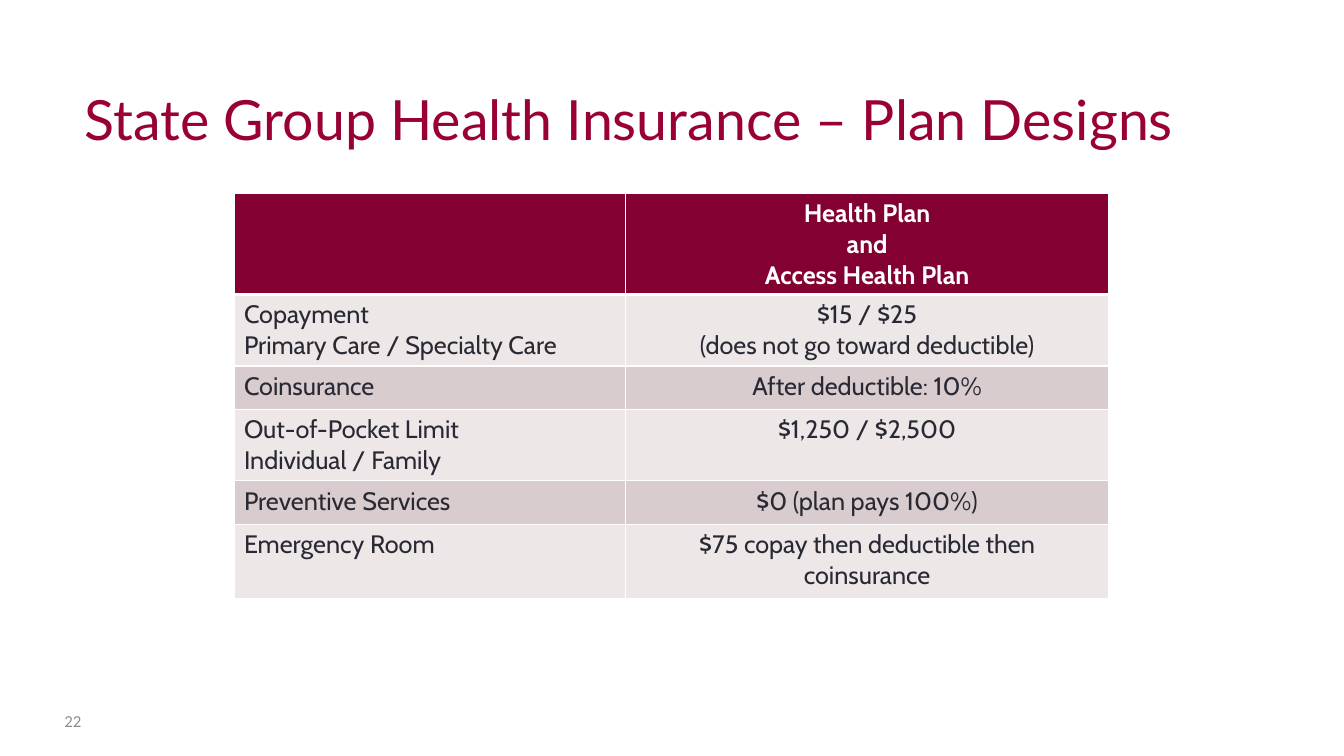
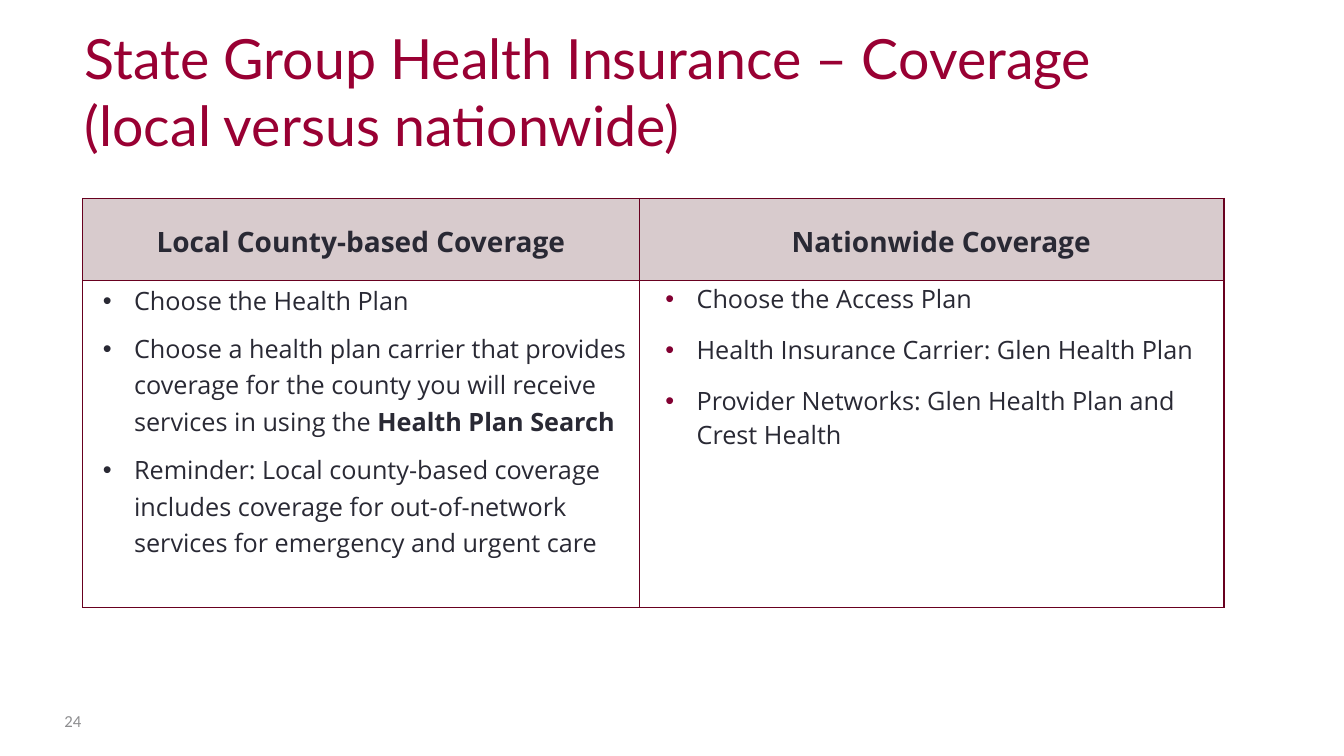
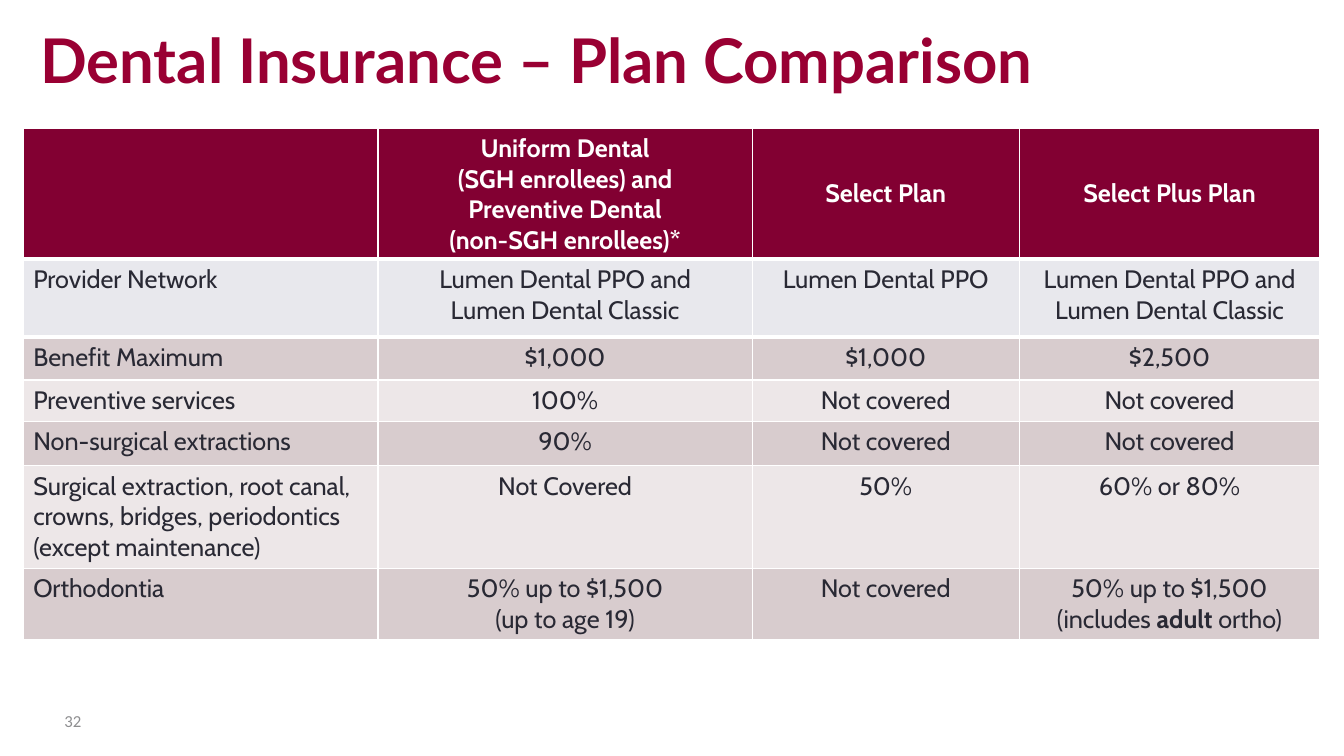
from lxml import etree
from pptx import Presentation
from pptx.dml.color import RGBColor
from pptx.enum.text import MSO_ANCHOR as Anchor, MSO_AUTO_SIZE as AutoSize, PP_ALIGN as Align
from pptx.oxml.ns import qn
from pptx.util import Inches, Pt

WHITE = RGBColor(0xFF, 0xFF, 0xFF)
TITLE_RED = RGBColor(0x99, 0x00, 0x33)
MAROON = RGBColor(0x82, 0x00, 0x32)
DARK_MAROON = RGBColor(0x68, 0x00, 0x1F)
INK = RGBColor(0x29, 0x29, 0x34)
NUMBER_GREY = RGBColor(0x8E, 0x8E, 0x90)
LIGHT_BAND = RGBColor(0xED, 0xE7, 0xE8)
DARK_BAND = RGBColor(0xD8, 0xCC, 0xCE)
COOL_BAND = RGBColor(0xE8, 0xE8, 0xED)
HEADING_FILL = RGBColor(0xD8, 0xCB, 0xCD)

# In table text a new line starts a paragraph and ** switches bold on or off.
PLAN_DESIGNS = [
    ["", "Health Plan\nand\nAccess Health Plan"],
    ["Copayment\nPrimary Care / Specialty Care", "$15 / $25\n(does not go toward deductible)"],
    ["Coinsurance", "After deductible: 10%"],
    ["Out-of-Pocket Limit\nIndividual / Family", "$1,250 / $2,500"],
    ["Preventive Services", "$0 (plan pays 100%)"],
    ["Emergency Room", "$75 copay then deductible then coinsurance"],
]
DENTAL_PLANS = [
    ["", "Uniform Dental\n(SGH enrollees) and\nPreventive Dental\n(non-SGH enrollees)*",
     "Select Plan", "Select Plus Plan"],
    ["Provider Network", "Lumen Dental PPO and\nLumen Dental Classic", "Lumen Dental PPO",
     "Lumen Dental PPO and\nLumen Dental Classic"],
    ["Benefit Maximum", "$1,000", "$1,000", "$2,500"],
    ["Preventive services", "100%", "Not covered", "Not covered"],
    ["Non-surgical extractions", "90%", "Not covered", "Not covered"],
    ["Surgical extraction, root canal, crowns, bridges, periodontics (except maintenance)",
     "Not Covered", "50%", "60% or 80%"],
    ["Orthodontia", "50% up to $1,500\n(up to age 19)", "Not covered",
     "50% up to $1,500\n(includes **adult** ortho)"],
]
COVERAGE = [
    ["Local County-based Coverage", "Nationwide Coverage"],
    ["Choose the Health Plan\n"
     "Choose a health plan carrier that provides coverage for the county you will receive "
     "services in using the **Health Plan Search**\n"
     "Reminder: Local county-based coverage includes coverage for out-of-network services "
     "for emergency and urgent care",
     "Choose the Access Plan\n"
     "Health Insurance Carrier: Glen Health Plan\n"
     "Provider Networks: Glen Health Plan and Crest Health"],
]
# Per column: heading indent, bullet indent, bullet colour, line spacing, space before and after
COVERAGE_COLUMNS = [
    (0, 0.44, INK, 1.07, 0, 8),
    (0.19, 0.5, MAROON, 1.0, 6, 6),
]


def add_titled_slide(presentation, title, box, number, size=39.6, bold=False):
    slide = presentation.slides.add_slide(presentation.slide_layouts[5])
    shape = slide.shapes.title
    shape.left, shape.top, shape.width, shape.height = map(Inches, box)
    text_frame = shape.text_frame
    text_frame.text = title
    text_frame.word_wrap = True
    text_frame.auto_size = AutoSize.NONE
    text_frame.vertical_anchor = Anchor.BOTTOM
    text_frame.paragraphs[0].alignment = Align.LEFT
    format_runs(text_frame.paragraphs[0], "Lato", size, TITLE_RED, bold)

    number_box = slide.shapes.add_textbox(*map(Inches, (0.54, 6.95, 0.56, 0.4)))
    number_frame = number_box.text_frame
    number_frame.text = str(number)
    number_frame.word_wrap = True
    number_frame.vertical_anchor = Anchor.MIDDLE
    format_runs(number_frame.paragraphs[0], "Calibri", 12, NUMBER_GREY)
    return slide


def format_runs(paragraph, font_name, size, color, bold=False):
    for run in paragraph.runs:
        run.font.name = font_name
        run.font.size = Pt(size)
        run.font.color.rgb = color
        run.font.bold = bold or bool(run.font.bold)


def add_table(slide, left, top, column_widths, row_heights):
    frame = slide.shapes.add_table(
        len(row_heights), len(column_widths), Inches(left), Inches(top),
        Inches(sum(column_widths)), Inches(sum(row_heights)))
    table = frame.table
    table.first_row = table.horz_banding = False
    for column, width in zip(table.columns, column_widths):
        column.width = Inches(width)
    for row, height in zip(table.rows, row_heights):
        row.height = Inches(height)
    return table


def set_borders(cell, color, top=1, bottom=1):
    """Add the four border lines; call before the cell gets its fill."""
    properties = cell._tc.get_or_add_tcPr()
    for side, width in (("L", 1), ("R", 1), ("T", top), ("B", bottom)):
        line = etree.SubElement(properties, qn(f"a:ln{side}"), w=str(Pt(width)))
        fill = etree.SubElement(line, qn("a:solidFill"))
        etree.SubElement(fill, qn("a:srgbClr"), val=str(color))


def fill_cell(cell, color):
    cell.fill.solid()
    cell.fill.fore_color.rgb = color


def write_cell(cell, text):
    """Write the marked-up text and return its paragraphs."""
    text_frame = cell.text_frame
    for index, line in enumerate(text.split("\n")):
        paragraph = text_frame.add_paragraph() if index else text_frame.paragraphs[0]
        for part, piece in enumerate(line.split("**")):
            if piece:
                run = paragraph.add_run()
                run.text = piece
                run.font.bold = part % 2 == 1
    return text_frame.paragraphs


def set_indent(paragraph, margin, first_line=0):
    properties = paragraph._p.get_or_add_pPr()
    properties.set("marL", str(Inches(margin)))
    properties.set("indent", str(Inches(first_line)))


def add_bullet(paragraph, color):
    properties = paragraph._p.get_or_add_pPr()
    bullet_color = etree.SubElement(properties, qn("a:buClr"))
    etree.SubElement(bullet_color, qn("a:srgbClr"), val=str(color))
    etree.SubElement(properties, qn("a:buFont"), typeface="Arial")
    etree.SubElement(properties, qn("a:buChar"), char="•")


def add_plan_table(slide, rows, left, top, column_widths, row_heights, row_fills, thick_lines):
    """Draw a plan table; thick_lines holds the numbers of the rows below a thick rule."""
    table = add_table(slide, left, top, column_widths, row_heights)
    for row_index, (texts, fill) in enumerate(zip(rows, row_fills)):
        is_header = row_index == 0
        for column_index, text in enumerate(texts):
            cell = table.cell(row_index, column_index)
            set_borders(cell, WHITE, top=3 if row_index in thick_lines else 1,
                        bottom=3 if row_index + 1 in thick_lines else 1)
            fill_cell(cell, fill)
            cell.vertical_anchor = Anchor.MIDDLE if is_header else Anchor.TOP
            for paragraph in write_cell(cell, text):
                paragraph.alignment = Align.CENTER if column_index else Align.LEFT
                format_runs(paragraph, "Cabin", 18, WHITE if is_header else INK, is_header)


def add_coverage_table(slide):
    table = add_table(slide, 0.82, 1.97, [5.52, 5.8], [0.81, 3.25])
    for column_index, column in enumerate(COVERAGE_COLUMNS):
        heading_indent, bullet_indent, bullet_color, spacing, before, after = column
        heading, body = (table.cell(row, column_index) for row in range(2))
        for cell in (heading, body):
            set_borders(cell, DARK_MAROON)
            cell.margin_left = cell.margin_right = Inches(0.07)
            cell.margin_top, cell.margin_bottom = Inches(0.01), 0

        fill_cell(heading, HEADING_FILL)
        heading.vertical_anchor = Anchor.MIDDLE
        paragraph = write_cell(heading, COVERAGE[0][column_index])[0]
        paragraph.alignment = Align.CENTER
        paragraph.line_spacing = 1.07
        paragraph.space_after = Pt(8)
        set_indent(paragraph, heading_indent)
        format_runs(paragraph, "Open Sans", 20, INK, True)

        body.fill.background()
        for index, paragraph in enumerate(write_cell(body, COVERAGE[1][column_index])):
            paragraph.line_spacing = spacing
            paragraph.space_before = Pt(before if index else 0)
            paragraph.space_after = Pt(after)
            set_indent(paragraph, bullet_indent, -0.31)
            add_bullet(paragraph, bullet_color)
            format_runs(paragraph, "Open Sans", 18, INK)


def main():
    presentation = Presentation()
    presentation.slide_width, presentation.slide_height = Inches(13.33), Inches(7.5)

    slide = add_titled_slide(presentation, "State Group Health Insurance – Plan Designs",
                             (0.74, 0.3, 11.94, 1.25), 22)
    add_plan_table(slide, PLAN_DESIGNS, 2.32, 1.92, [3.88, 4.8],
                   [1.0, 0.71, 0.43, 0.71, 0.43, 0.74],
                   [MAROON] + [LIGHT_BAND, DARK_BAND] * 2 + [LIGHT_BAND], {1})

    slide = add_titled_slide(
        presentation, "State Group Health Insurance – Coverage\v(local versus nationwide)",
        (0.74, 0.36, 11.94, 1.25), 24)
    add_coverage_table(slide)

    slide = add_titled_slide(presentation, "Dental Insurance – Plan Comparison",
                             (0.3, 0.18, 12.54, 0.82), 32, size=44, bold=True)
    add_plan_table(slide, DENTAL_PLANS, 0.23, 1.27, [3.52, 3.71, 2.65, 2.98],
                   [1.3, 0.77, 0.43, 0.41, 0.44, 1.02, 0.71],
                   [MAROON, COOL_BAND, DARK_BAND] + [LIGHT_BAND, DARK_BAND] * 2, {1, 2})

    presentation.save("out.pptx")


if __name__ == "__main__":
    main()
